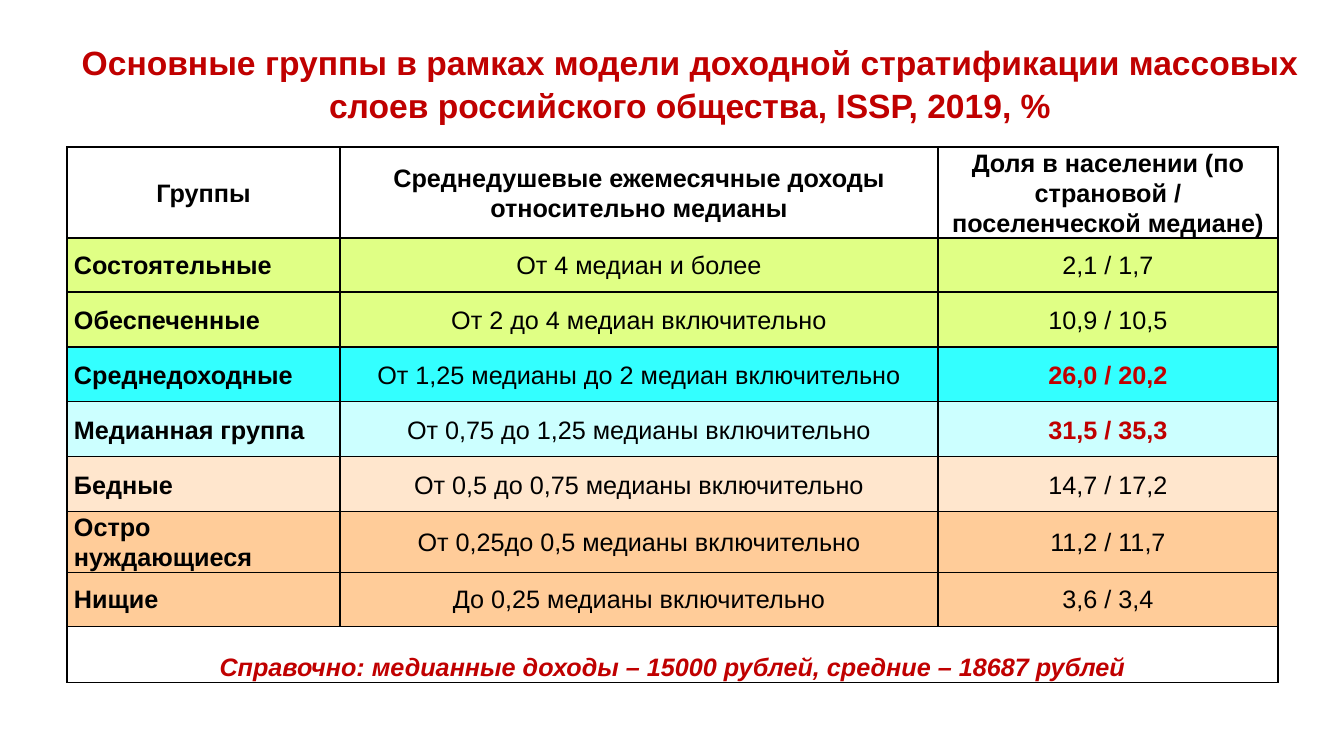
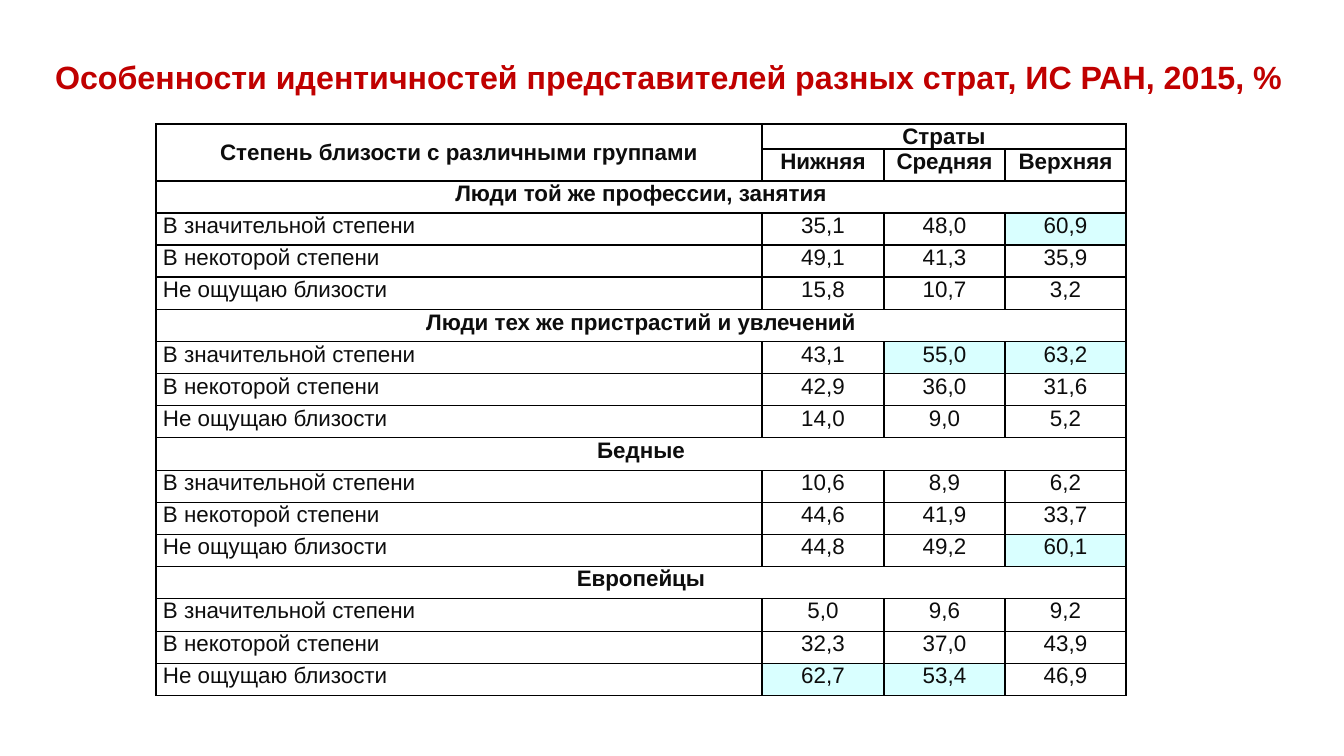
from lxml.etree import SubElement
from pptx import Presentation
from pptx.dml.color import RGBColor
from pptx.enum.text import MSO_ANCHOR as Anchor, MSO_AUTO_SIZE as AutoSize, PP_ALIGN as Align
from pptx.oxml.ns import qn
from pptx.util import Emu, Pt

# Shared style
EMU_PER_PX = 914400 / 100.8
FONT = "Arial"
RED, BLACK, INK, WHITE = "C00000", "000000", "0D0D0D", "FFFFFF"
LIME, CYAN, PALE_CYAN = "E0FF85", "33FFFF", "CCFFFF"
PEACH, ORANGE, HIGHLIGHT = "FFE6CD", "FFCC99", "D9FFFF"
TITLE_ONLY = 5


def px(length):
    return Emu(round(length * EMU_PER_PX))


def rgb(value):
    return RGBColor.from_string(value)


class Deck:
    def __init__(self):
        self.prs = Presentation()
        self.prs.slide_width, self.prs.slide_height = px(1344), px(756)
        self.slide = None
        self.grid = None

    def add_text(self, frame, text, size, color, bold=False, italic=False,
                 align=Align.CENTER, spacing=1.0):
        paragraph = frame.paragraphs[0]
        paragraph.alignment = align
        paragraph.line_spacing = spacing
        run = paragraph.add_run()
        run.text = text
        font = run.font
        font.name, font.size, font.bold, font.italic = FONT, Pt(size), bold, italic
        font.color.rgb = rgb(color)

    def titled_slide(self, text, left, top, width, height, size, align):
        self.slide = self.prs.slides.add_slide(self.prs.slide_layouts[TITLE_ONLY])
        title = self.slide.shapes.title
        title.left, title.top = px(left), px(top)
        title.width, title.height = px(width), px(height)
        frame = title.text_frame
        frame.word_wrap = True
        frame.auto_size = AutoSize.NONE
        frame.vertical_anchor = Anchor.BOTTOM
        frame.margin_left = frame.margin_right = px(10)
        frame.margin_top = frame.margin_bottom = px(5)
        self.add_text(frame, text, size, RED, bold=True, align=align, spacing=1.07)

    def table(self, left, top, widths, heights):
        self.grid = self.slide.shapes.add_table(
            len(heights), len(widths), px(left), px(top),
            px(sum(widths)), px(sum(heights))).table
        self.grid.first_row = self.grid.horz_banding = False
        for column, width in zip(self.grid.columns, widths):
            column.width = px(width)
        for row, height in zip(self.grid.rows, heights):
            row.height = px(height)
        for cell in self.grid.iter_cells():
            cell.margin_left = cell.margin_right = px(7)
            cell.margin_top = cell.margin_bottom = 0
            self.border(cell)
            cell.fill.background()

    def border(self, cell):
        properties = cell._tc.get_or_add_tcPr()
        for side in ("lnL", "lnR", "lnT", "lnB"):
            line = SubElement(properties, qn(f"a:{side}"), w=str(Pt(1)))
            fill = SubElement(line, qn("a:solidFill"))
            SubElement(fill, qn("a:srgbClr"), val=BLACK)

    def cell(self, row, col, text, size, color, fill=None, anchor=Anchor.TOP,
             span=(1, 1), **style):
        cell = self.grid.cell(row, col)
        if span != (1, 1):
            cell.merge(self.grid.cell(row + span[0] - 1, col + span[1] - 1))
        cell.vertical_anchor = anchor
        if fill:
            cell.fill.solid()
            cell.fill.fore_color.rgb = rgb(fill)
        self.add_text(cell.text_frame, text, size, color, **style)


# Slide 1: income groups
def income_groups(deck):
    deck.titled_slide(
        "Основные группы в рамках модели доходной стратификации массовых слоев "
        "российского общества, ISSP, 2019, %", 66, 21, 1248, 109, 24, Align.CENTER)
    deck.table(67, 147, [273, 598, 340], [91, 54, 55, 55, 55, 55, 60, 54, 56])

    headings = ("Группы", "Среднедушевые ежемесячные доходы относительно медианы",
                "Доля в населении (по страновой / поселенческой медиане)")
    for col, heading in enumerate(headings):
        deck.cell(0, col, heading, 18, BLACK, WHITE, Anchor.MIDDLE, bold=True, spacing=1.07)

    groups = [
        ("Состоятельные", "От 4 медиан и более", "2,1 / 1,7", LIME),
        ("Обеспеченные", "От 2 до 4 медиан включительно", "10,9 / 10,5", LIME),
        ("Среднедоходные", "От 1,25 медианы до 2 медиан включительно", "26,0 / 20,2", CYAN),
        ("Медианная группа", "От 0,75 до 1,25 медианы включительно", "31,5 / 35,3", PALE_CYAN),
        ("Бедные", "От 0,5 до 0,75 медианы включительно", "14,7 / 17,2", PEACH),
        ("Остро нуждающиеся", "От 0,25до 0,5 медианы включительно", "11,2 / 11,7", ORANGE),
        ("Нищие", "До 0,25 медианы включительно", "3,6 / 3,4", ORANGE),
    ]
    for row, (group, income, share, fill) in enumerate(groups, 1):
        largest = fill in (CYAN, PALE_CYAN)
        shared = dict(fill=fill, anchor=Anchor.MIDDLE, spacing=1.07)
        deck.cell(row, 0, group, 18, BLACK, bold=True, align=Align.LEFT, **shared)
        deck.cell(row, 1, income, 18, BLACK, **shared)
        deck.cell(row, 2, share, 18, RED if largest else BLACK, bold=largest, **shared)

    deck.cell(len(groups) + 1, 0,
              "Справочно: медианные доходы – 15000 рублей, средние – 18687 рублей",
              18, RED, WHITE, Anchor.BOTTOM, span=(1, 3), bold=True, italic=True)


# Slide 2: identities by stratum
def identities(deck):
    deck.titled_slide("Особенности идентичностей представителей разных страт, ИС РАН, 2015, %",
                      45, 30, 1290, 71, 23, Align.LEFT)
    degrees = ("В значительной степени", "В некоторой степени", "Не ощущаю близости")
    sections = [
        ("Люди той же профессии, занятия",
         ["35,1 48,0 60,9", "49,1 41,3 35,9", "15,8 10,7 3,2"]),
        ("Люди тех же пристрастий и увлечений",
         ["43,1 55,0 63,2", "42,9 36,0 31,6", "14,0 9,0 5,2"]),
        ("Бедные",
         ["10,6 8,9 6,2", "44,6 41,9 33,7", "44,8 49,2 60,1"]),
        ("Европейцы",
         ["5,0 9,6 9,2", "32,3 37,0 43,9", "62,7 53,4 46,9"]),
    ]
    highlighted = {"60,9", "55,0", "63,2", "60,1", "62,7", "53,4"}
    # Every fifth row is one px taller, so rows average 32.2 px
    deck.table(156, 124, [606, 122, 121, 121],
               [25] + [32 + (i % 5 == 4) for i in range(17)])

    deck.cell(0, 0, "Степень близости с различными группами", 16, INK,
              anchor=Anchor.MIDDLE, span=(2, 1), bold=True)
    deck.cell(0, 1, "Страты", 16, INK, span=(1, 3), bold=True)
    for col, stratum in enumerate(("Нижняя", "Средняя", "Верхняя"), 1):
        deck.cell(1, col, stratum, 16, INK, bold=True)

    for index, (people, answers) in enumerate(sections):
        top_row = 2 + index * (len(degrees) + 1)
        deck.cell(top_row, 0, people, 16, INK, span=(1, 4), bold=True)
        for row, (degree, shares) in enumerate(zip(degrees, answers), top_row + 1):
            deck.cell(row, 0, degree, 16, INK, align=Align.LEFT)
            for col, share in enumerate(shares.split(), 1):
                deck.cell(row, col, share, 16, INK,
                          HIGHLIGHT if share in highlighted else None)


def main():
    deck = Deck()
    income_groups(deck)
    identities(deck)
    deck.prs.save("out.pptx")


if __name__ == "__main__":
    main()
